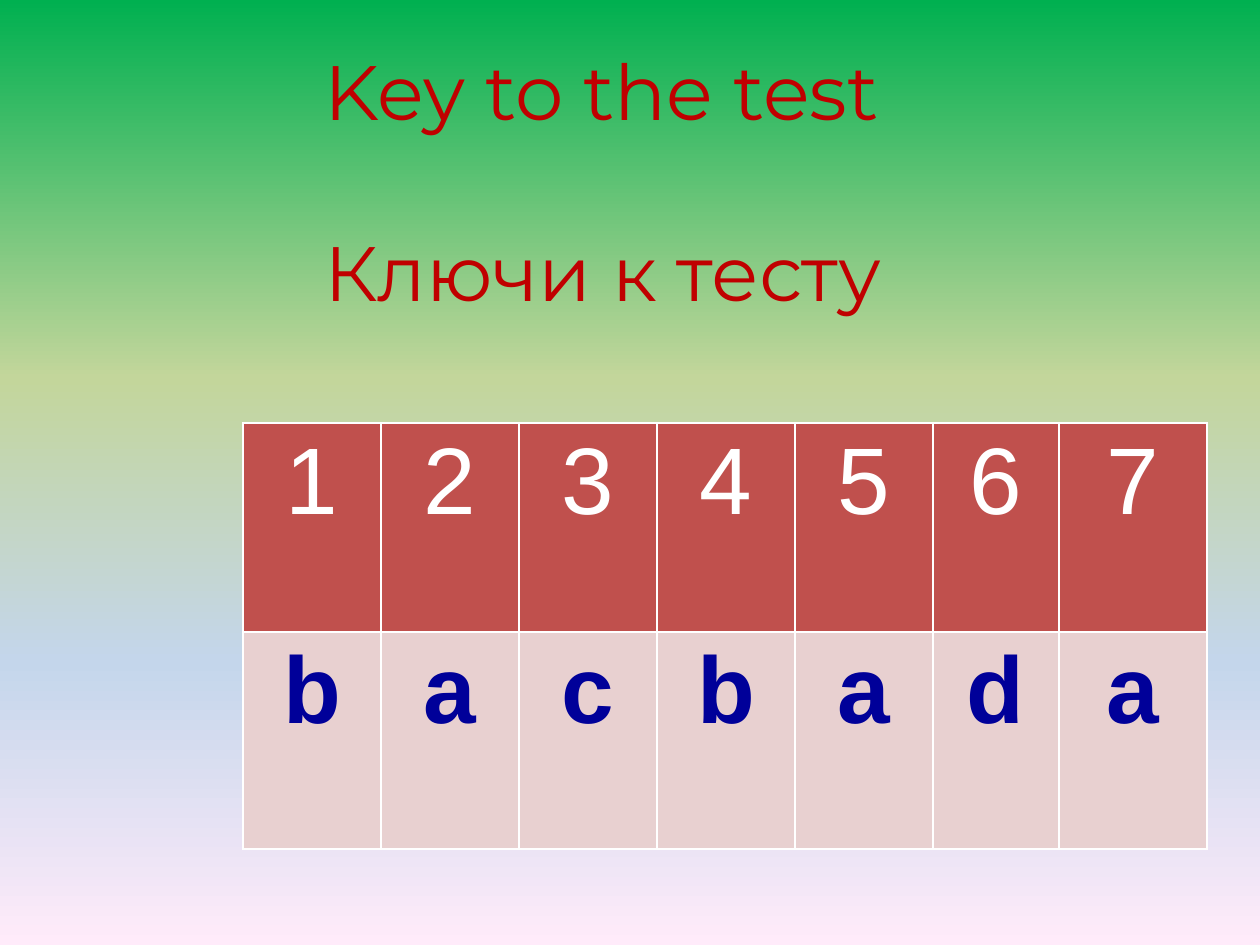
from copy import deepcopy

from lxml import etree
from pptx import Presentation
from pptx import util as u
from pptx.dml.color import RGBColor
from pptx.enum import text
from pptx.oxml import ns

SCALE = 914400 / 126
COLORS = {
    "title": "C00000", "head": "C0504D", "body": "E8D0D0",
    "head_text": "FFFFFF", "body_text": "000099", "border": "FFFFFF",
}
GRADIENT = [(0, "00B050"), (0.4, "C3D69B"), (0.7, "C4D6EB"), (1, "FFEBFA")]
TITLE = ["Key to the test", "Ключи к тесту"]
ANSWERS = ["1234567", "bacbada"]
COL_WIDTHS = [138] * 5 + [126, 148]
ROW_HEIGHTS = [209, 217]


def px(n):
    """Turn pixels into EMU."""
    return u.Emu(round(n * SCALE))


def set_attrs(obj, values):
    """Set attributes from a dict of format values."""
    for name, value in values.items():
        setattr(obj, name, value)


def set_font(font, color, **values):
    """Format a font."""
    set_attrs(font, values)
    font.color.rgb = RGBColor.from_string(COLORS[color])


def set_background(s):
    """Fill the slide with a downward gradient."""
    fill = s.background.fill
    fill.gradient()
    fill.gradient_angle = 270
    stops = s.element.find(".//" + ns.qn("a:gsLst"))
    while len(stops) < len(GRADIENT):
        stops.append(deepcopy(stops[0]))
    for stop, (position, color) in zip(fill.gradient_stops, GRADIENT):
        stop.position = position
        stop.color.rgb = RGBColor.from_string(color)


def add_title(s):
    """Place the two-language title."""
    sp = s.shapes.title
    set_attrs(sp, {"left": px(312), "top": px(37), "width": px(658), "height": px(292)})
    tf = sp.text_frame
    tf.text = "\n".join(TITLE)
    set_attrs(tf, {
        "word_wrap": False,
        "auto_size": text.MSO_AUTO_SIZE.SHAPE_TO_FIT_TEXT,
        "vertical_anchor": text.MSO_ANCHOR.TOP,
    })
    for p in tf.paragraphs:
        p.alignment = text.PP_ALIGN.LEFT
        for r in p.runs:
            set_font(r.font, "title", name="Montserrat", size=u.Pt(44))
    tf.paragraphs[1].space_before = u.Pt(51)


def set_borders(cell):
    """Draw a thin line on each side of a cell."""
    tc_pr = cell._tc.get_or_add_tcPr()
    for side in "LRTB":
        ln = etree.SubElement(tc_pr, ns.qn(f"a:ln{side}"), w=str(u.Pt(1)))
        fill = etree.SubElement(ln, ns.qn("a:solidFill"))
        etree.SubElement(fill, ns.qn("a:srgbClr"), val=COLORS["border"])


def format_cell(cell, letter, kind):
    """Write one cell in the style of its row."""
    set_borders(cell)
    cell.fill.solid()
    cell.fill.fore_color.rgb = RGBColor.from_string(COLORS[kind])
    p = cell.text_frame.paragraphs[0]
    p.alignment = text.PP_ALIGN.CENTER
    r = p.add_run()
    r.text = letter
    set_font(r.font, kind + "_text", name="Arial", size=u.Pt(54), bold=kind == "body")


def add_answers(s):
    """Add the table of answers."""
    table = s.shapes.add_table(
        len(ROW_HEIGHTS), len(COL_WIDTHS), px(243), px(423),
        px(sum(COL_WIDTHS)), px(sum(ROW_HEIGHTS))).table
    for column, width in zip(table.columns, COL_WIDTHS):
        column.width = px(width)
    for row, height, letters, kind in zip(table.rows, ROW_HEIGHTS, ANSWERS, ("head", "body")):
        row.height = px(height)
        for cell, letter in zip(row.cells, letters):
            format_cell(cell, letter, kind)


def main():
    """Build the slide."""
    prs = Presentation()
    set_attrs(prs, {"slide_width": px(1260), "slide_height": px(945)})
    s = prs.slides.add_slide(prs.slide_layouts[5])
    set_background(s)
    add_title(s)
    add_answers(s)
    prs.save("out.pptx")


if __name__ == "__main__":
    main()
